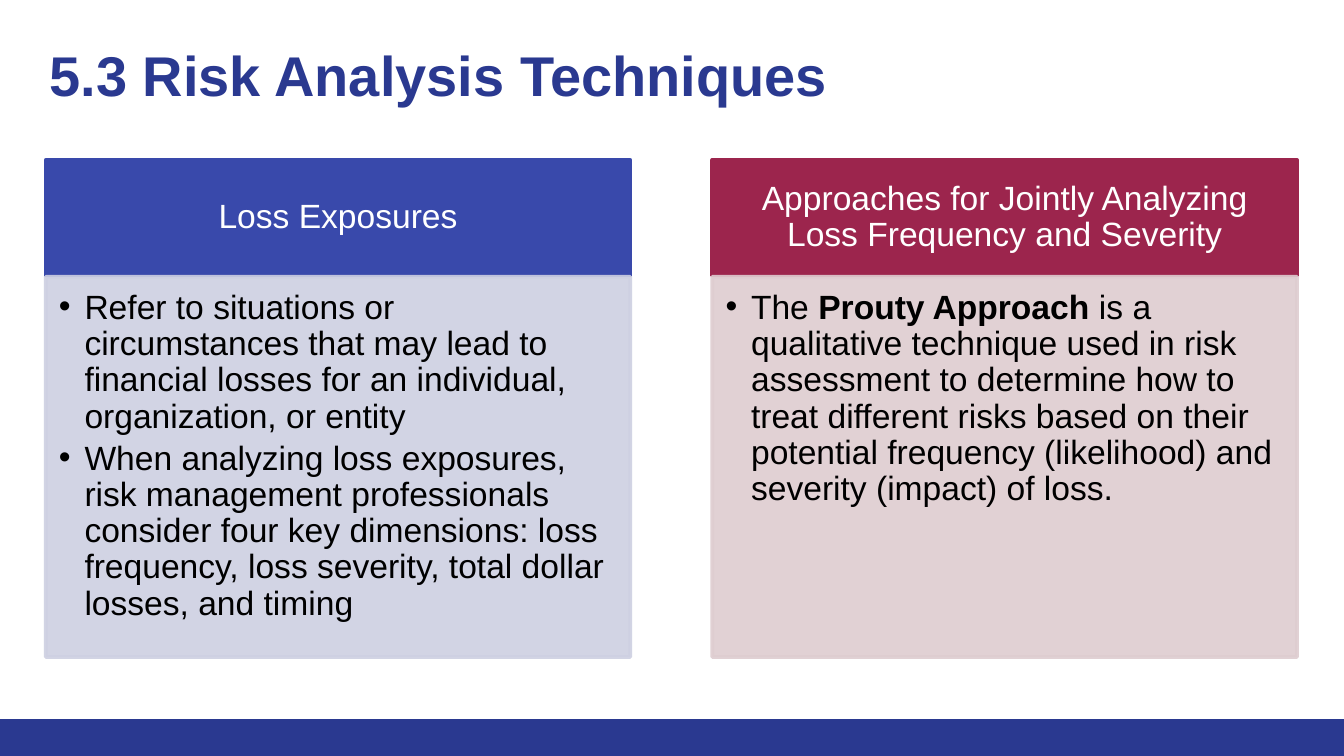
from dataclasses import dataclass

from lxml import etree
from pptx import Presentation
from pptx import util as u
from pptx.dml.color import RGBColor
from pptx.enum import shapes, text
from pptx.oxml import ns

SLIDE_WIDTH = 10
SLIDE_HEIGHT = SLIDE_WIDTH * 9 / 16
FOOTER_TOP = 5.35
NAVY = "2A3990"
WHITE = "FFFFFF"
BLACK = "000000"
HEADER_MARGINS = (0.14, 0.08, 0.14, 0.08)
BODY_MARGINS = (0.1, 0.1, 0.14, 0.16)


@dataclass
class Run:
    words: str
    bold: bool = False


@dataclass
class Column:
    heading: str
    points: list[list[Run]]
    header_color: str
    body_color: str


COLUMNS = [
    Column(
        "Loss Exposures",
        [
            [Run("Refer to situations or circumstances that may lead to financial "
                 "losses for an individual, organization, or entity")],
            [Run("When analyzing loss exposures, risk management professionals "
                 "consider four key dimensions: loss frequency, loss severity, "
                 "total dollar losses, and timing")],
        ],
        "3949AB",
        "CED0E2",
    ),
    Column(
        "Approaches for Jointly Analyzing Loss Frequency and Severity",
        [
            [
                Run("The "),
                Run("Prouty Approach", bold=True),
                Run(" is a qualitative technique used in risk assessment to "
                    "determine how to treat different risks based on their potential "
                    "frequency (likelihood) and severity (impact) of loss."),
            ],
        ],
        "9C254D",
        "DECDD0",
    ),
]


def paint(target, color: str) -> None:
    if hasattr(target, "solid"):
        target.solid()
        target = target.fore_color
    target.rgb = RGBColor.from_string(color)


def set_font(paragraph, size: float, color: str) -> None:
    paragraph.font.name = "Arial"
    paragraph.font.size = u.Pt(size)
    paint(paragraph.font.color, color)


def set_frame(frame, margins: tuple, anchor) -> None:
    frame.word_wrap = True
    frame.vertical_anchor = anchor
    (frame.margin_left, frame.margin_top,
     frame.margin_right, frame.margin_bottom) = map(u.Inches, margins)


def add_panel(slide, left: float, top: float, width: float, height: float,
              color: str, outlined: bool = True):
    panel = slide.shapes.add_shape(
        shapes.MSO_SHAPE.RECTANGLE, *map(u.Inches, (left, top, width, height)))
    panel.shadow.inherit = False
    paint(panel.fill, color)
    if outlined:
        paint(panel.line.fill, color)
        panel.line.width = u.Pt(2)
    else:
        panel.line.fill.background()
    return panel


def set_opacity(panel, percent: int) -> None:
    for color in panel._element.spPr.iter(ns.qn("a:srgbClr")):
        etree.SubElement(color, ns.qn("a:alpha"), val=str(percent * 1000))


def add_bullet(paragraph) -> None:
    properties = paragraph._p.get_or_add_pPr()
    properties.set("marL", str(u.Inches(0.19)))
    properties.set("indent", str(u.Inches(-0.19)))
    bullet_color = etree.SubElement(properties, ns.qn("a:buClr"))
    etree.SubElement(bullet_color, ns.qn("a:srgbClr"), val=BLACK)
    etree.SubElement(properties, ns.qn("a:buFont"), typeface="Arial")
    etree.SubElement(properties, ns.qn("a:buChar"), char="•")


def add_column(slide, column: Column, left: float) -> None:
    header = add_panel(slide, left, 1.19, 4.35, 0.86, column.header_color)
    set_frame(header.text_frame, HEADER_MARGINS, text.MSO_ANCHOR.MIDDLE)
    heading = header.text_frame.paragraphs[0]
    heading.text = column.heading
    heading.alignment = text.PP_ALIGN.CENTER
    heading.line_spacing = 0.9
    set_font(heading, 18, WHITE)

    body = add_panel(slide, left, 2.06, 4.35, 2.83, column.body_color)
    set_opacity(body, 90)
    frame = body.text_frame
    set_frame(frame, BODY_MARGINS, text.MSO_ANCHOR.TOP)
    for index, point in enumerate(column.points):
        paragraph = frame.add_paragraph() if index else frame.paragraphs[0]
        paragraph.level = 1
        add_bullet(paragraph)
        paragraph.alignment = text.PP_ALIGN.LEFT
        paragraph.line_spacing = 0.9
        paragraph.space_after = u.Pt(3)
        set_font(paragraph, 18, BLACK)
        for part in point:
            run = paragraph.add_run()
            run.text = part.words
            if part.bold:
                run.font.bold = True


def add_title(slide, words: str) -> None:
    title = slide.shapes.add_textbox(*map(u.Inches, (0.27, 0.2, 9.2, 0.89)))
    set_frame(title.text_frame, (0.1,) * 4, text.MSO_ANCHOR.TOP)
    paragraph = title.text_frame.paragraphs[0]
    paragraph.text = words
    paragraph.font.bold = True
    set_font(paragraph, 30, NAVY)


def main() -> None:
    deck = Presentation()
    deck.slide_width = u.Inches(SLIDE_WIDTH)
    deck.slide_height = u.Inches(SLIDE_HEIGHT)
    slide = deck.slides.add_slide(deck.slide_layouts[6])
    add_panel(slide, 0, FOOTER_TOP, SLIDE_WIDTH, SLIDE_HEIGHT - FOOTER_TOP,
              NAVY, outlined=False)
    for index, column in enumerate(COLUMNS):
        add_column(slide, column, 0.34 + index * 4.96)
    add_title(slide, "5.3 Risk Analysis Techniques")
    deck.save("out.pptx")


if __name__ == "__main__":
    main()
